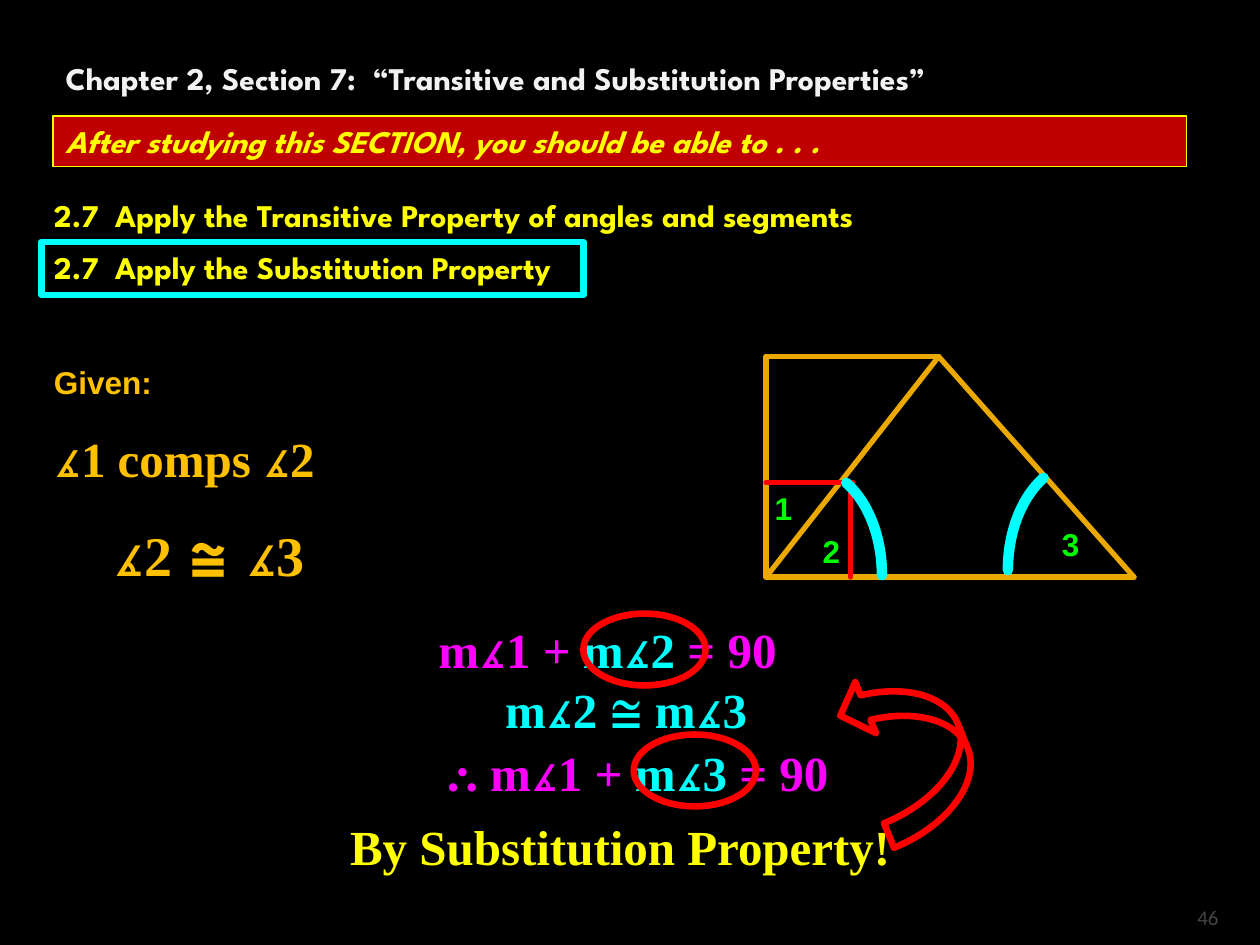
from pptx import Presentation
from pptx.dml.color import RGBColor
from pptx.enum.shapes import MSO_CONNECTOR, MSO_SHAPE
from pptx.enum.text import MSO_ANCHOR, PP_ALIGN
from pptx.oxml.ns import qn
from pptx.util import Inches, Pt
from lxml import etree

LEFT, CENTER, RIGHT = PP_ALIGN.LEFT, PP_ALIGN.CENTER, PP_ALIGN.RIGHT
TOP, BOTTOM = MSO_ANCHOR.TOP, MSO_ANCHOR.BOTTOM
STRAIGHT = MSO_CONNECTOR.STRAIGHT
RECTANGLE, OVAL = MSO_SHAPE.RECTANGLE, MSO_SHAPE.OVAL
ARC, CURVED_ARROW = MSO_SHAPE.ARC, MSO_SHAPE.CURVED_RIGHT_ARROW

HEADING, LABEL, MATH, SYMBOL = "League Spartan", "Arial", "Times New Roman", "TeX Gyre Adventor"
YELLOW, GOLD, ORANGE = "FFFF00", "FFC000", "EBA900"
CYAN, MAGENTA, RED, GREEN = "00FFFF", "FF00FF", "FF0000", "00FF00"
THICK = 3.78


def color(value):
    return RGBColor.from_string(value)


class LessonPage:
    def __init__(self, deck):
        self.page = deck.slides.add_slide(deck.slide_layouts[5])
        self.page.background.fill.solid()
        self.page.background.fill.fore_color.rgb = color("000000")

    def fill_text(self, box, spans, size, font, bold=True, italic=False, align=LEFT, anchor=TOP):
        frame = box.text_frame
        frame.word_wrap = True
        frame.vertical_anchor = anchor
        frame.margin_left = frame.margin_right = Inches(0.1)
        frame.margin_top = frame.margin_bottom = Inches(0.05)
        para = frame.paragraphs[0]
        para.alignment = align
        for text, tint, *special in spans:
            span = para.add_run()
            span.text = text
            span.font.size = Pt(size)
            span.font.name = special[0] if special else font
            span.font.bold, span.font.italic = bold, italic
            span.font.color.rgb = color(tint)
        return frame

    def place(self, box, left, top, width, height):
        box.left, box.top = Inches(left), Inches(top)
        box.width, box.height = Inches(width), Inches(height)

    def title(self, bounds, text, tint):
        box = self.page.shapes.title
        self.place(box, *bounds)
        self.fill_text(box, [(text, tint)], 18, HEADING)

    def text(self, bounds, spans, size=18, font=HEADING, **options):
        box = self.page.shapes.add_textbox(*map(Inches, bounds))
        return self.fill_text(box, spans, size, font, **options)

    def shape(self, kind, bounds, tint, weight=THICK, fill=None):
        shape = self.page.shapes.add_shape(kind, *map(Inches, bounds))
        shape.shadow.inherit = False
        if fill:
            shape.fill.solid()
            shape.fill.fore_color.rgb = color(fill)
        else:
            shape.fill.background()
        shape.line.color.rgb = color(tint)
        shape.line.width = Pt(weight)
        return shape

    def flip(self, shape, *directions):
        for direction in directions:
            shape.element.spPr.xfrm.set(direction, "1")

    def round_ends(self, shape):
        shape.element.spPr.find(qn("a:ln")).set("cap", "rnd")

    def arc(self, bounds, mirrored=False):
        arc = self.shape(ARC, bounds, CYAN, 6)
        arc.adjustments[0], arc.adjustments[1] = 175.43, 0
        self.round_ends(arc)
        if mirrored:
            self.flip(arc, "flipH")

    def line(self, start, end, tint):
        line = self.page.shapes.add_connector(STRAIGHT, *map(Inches, start + end))
        line.line.color.rgb = color(tint)
        line.line.width = Pt(3)
        self.round_ends(line)
        etree.SubElement(line.element.spPr, qn("a:effectLst"))


def build():
    deck = Presentation()
    deck.slide_width, deck.slide_height = Inches(10), Inches(7.5)
    lesson = LessonPage(deck)

    number = lesson.text((8.97, 7.08, 0.8, 0.3), [("46", "454545")], 12, "Calibri",
                         bold=False, align=RIGHT, anchor=BOTTOM)
    number.margin_bottom = 0
    lesson.title((0.42, 0.42, 9, 0.4),
                 "Chapter 2, Section 7:  “Transitive and Substitution Properties”", "F2F2F2")
    banner = lesson.shape(RECTANGLE, (0.42, 0.92, 9, 0.4), YELLOW, 0.75, "C00000")
    lesson.fill_text(banner, [("After studying this SECTION, you should be able to . . .", YELLOW)],
                     18, HEADING, italic=True)
    for top, goal in ((1.51, "2.7  Apply the Transitive Property of angles and segments"),
                      (1.92, "2.7  Apply the Substitution Property")):
        lesson.text((0.33, top, 9, 0.4), [(goal, YELLOW)])
    lesson.shape(RECTANGLE, (0.33, 1.92, 4.3, 0.42), CYAN)

    corner, upper_left, apex, right = (6.08, 4.58), (6.08, 2.83), (7.45, 2.83), (9, 4.58)
    for start, end in ((corner, right), (corner, upper_left), (upper_left, apex),
                       (apex, right), (corner, apex)):
        lesson.line(start, end, ORANGE)
    for left, top, name in ((6.05, 3.83, "1"), (6.43, 4.17, "2"), (8.33, 4.12, "3")):
        lesson.text((left, top, 0.33, 0.4), [(name, GREEN)], font=LABEL)

    lesson.text((0.33, 2.83, 3.5, 0.4), [("Given:", GOLD)], font=LABEL)
    lesson.text((0.33, 3.35, 2.5, 0.57), [("∡1 comps ∡2", GOLD)], 28, MATH)
    lesson.line((6.08, 3.83), (6.77, 3.83), RED)
    lesson.line((6.75, 4.58), (6.75, 3.83), RED)
    lesson.text((0.8, 4.08, 1.86, 0.64),
                [("∡2", GOLD), (" ≅ ", GOLD, SYMBOL), ("∡3", GOLD)], 32, MATH)
    lesson.arc((5.83, 3.71, 1.17, 1.71))
    lesson.arc((8, 3.67, 1.17, 1.71), mirrored=True)

    for bounds, opening, angle in (((3.38, 4.87, 3.22, 0.57), "m∡1 + ", "m∡2"),
                                   ((3.45, 5.84, 4.3, 0.57), "∴ m∡1 + ", "m∡3")):
        lesson.text(bounds, [(opening, MAGENTA), (angle, CYAN), (" = 90", MAGENTA)], 28, MATH)
    lesson.text((3.36, 5.34, 3.22, 0.57), [("m∡2 ≅ m∡3", CYAN)], 28, MATH, align=CENTER)
    lesson.text((2.68, 6.43, 4.89, 0.57), [("By Substitution Property!", YELLOW)], 28, MATH)

    for left, top in ((4.63, 4.87), (5.03, 5.83)):
        lesson.shape(OVAL, (left, top, 0.97, 0.57), RED)
    arrow = lesson.shape(CURVED_ARROW, (6.81, 5.27, 0.84, 1.35), RED)
    for index, value in enumerate((0.25, 0.52, 0.25)):
        arrow.adjustments[index] = value
    arrow.rotation = 337.9
    lesson.flip(arrow, "flipH", "flipV")

    deck.save("out.pptx")


if __name__ == "__main__":
    build()
